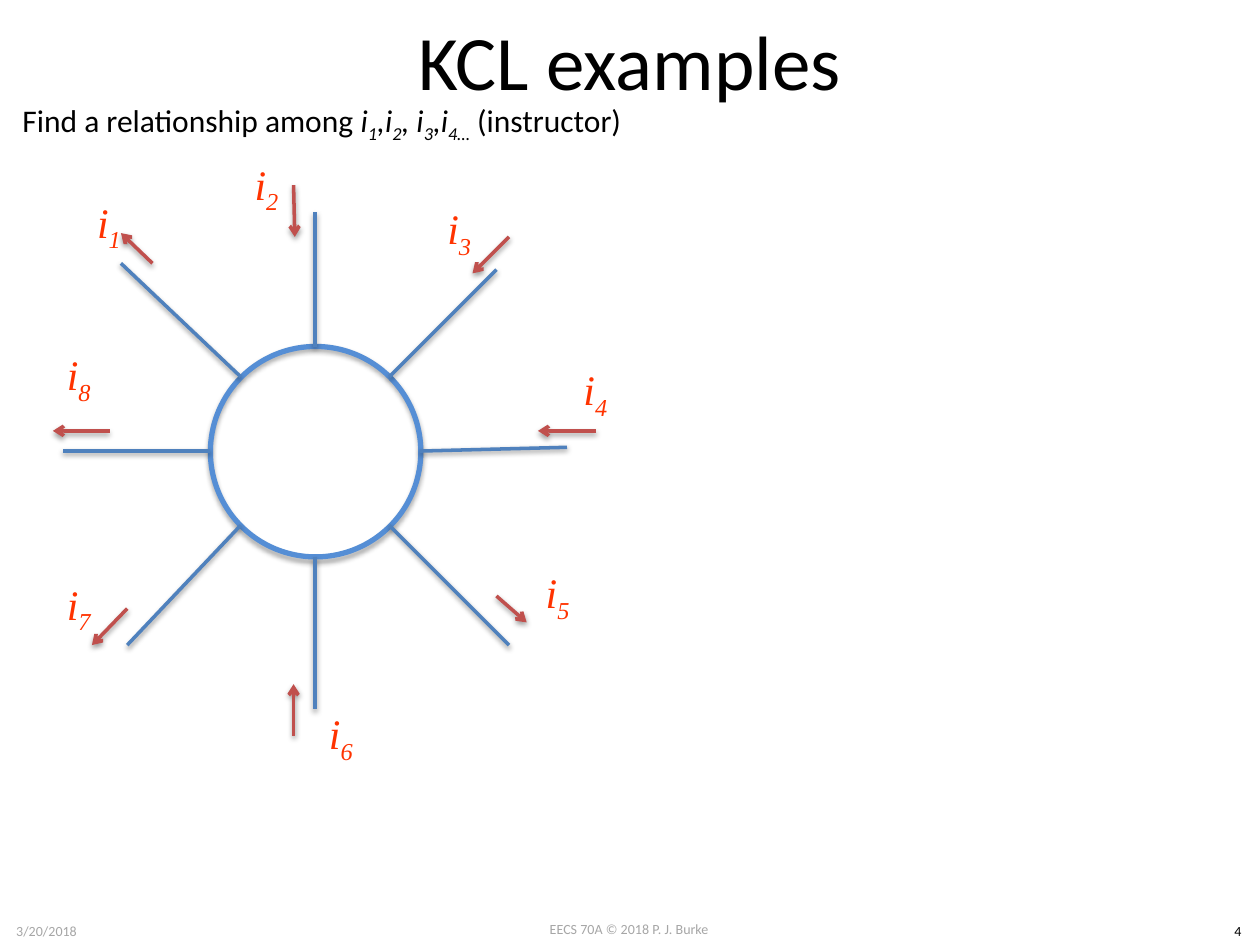
from pptx import Presentation
from pptx.dml.color import RGBColor
from pptx.enum.shapes import MSO_CONNECTOR, MSO_SHAPE
from pptx.enum.text import MSO_ANCHOR, MSO_AUTO_SIZE, PP_ALIGN
from pptx.oxml import parse_xml
from pptx.oxml.ns import nsdecls
from pptx.util import Inches, Pt

STRAIGHT = MSO_CONNECTOR.STRAIGHT
ELLIPSE = MSO_SHAPE.OVAL
MIDDLE, TOP = MSO_ANCHOR.MIDDLE, MSO_ANCHOR.TOP
CENTER, LEFT = PP_ALIGN.CENTER, PP_ALIGN.LEFT
FIT_SHAPE, NO_FIT = MSO_AUTO_SIZE.SHAPE_TO_FIT_TEXT, MSO_AUTO_SIZE.NONE

BLACK = RGBColor(0x00, 0x00, 0x00)
GRAY = RGBColor(0xA6, 0xA6, 0xA6)
BRANCH_BLUE = RGBColor(0x4F, 0x81, 0xBD)
NODE_BLUE = RGBColor(0x55, 0x8E, 0xD5)
ARROW_RED = RGBColor(0xC0, 0x50, 0x4D)
LABEL_RED = RGBColor(0xFF, 0x33, 0x00)

TITLE_FONT = {"name": "Calibri", "size": Pt(44), "color": BLACK}
TASK_FONT = {"name": "Calibri", "size": Pt(18), "color": BLACK}
FOOTER_FONT = {"name": "Calibri", "size": Pt(8), "color": GRAY}
NUMBER_FONT = FOOTER_FONT | {"color": BLACK}
LABEL_FONT = {"name": "Times New Roman", "size": Pt(24), "italic": True, "color": LABEL_RED}

NODE = (1.67, 2.75, 1.67, 1.67)
LABEL_SIZE = (0.77, 0.61)
TASK = [
    ("Find a relationship among ", False, False),
    ("i", True, False), ("1", True, True),
    (",i", True, False), ("2", True, True),
    (", i", True, False), ("3", True, True),
    (",i", True, False), ("4…", True, True),
    (" (instructor)", False, False),
]
FOOTERS = [
    ("EECS 70A © 2018 P. J. Burke", (3.83, 7.26, 2.33, 0.24), FOOTER_FONT),
    ("3/20/2018", (0, 7.27, 0.74, 0.24), FOOTER_FONT),
    ("4", (9.65, 7.27, 0.35, 0.24), NUMBER_FONT),
]
# Each current: label corner, branch ends, arrow ends.
CURRENTS = [
    ((0.48, 1.48), (1.91, 2.99, 0.96, 2.09), (1.21, 2.09, 0.96, 1.85)),
    ((1.73, 1.18), (2.5, 2.75, 2.5, 1.68), (2.33, 1.47, 2.34, 1.88)),
    ((3.26, 1.53), (3.09, 2.99, 3.94, 2.14), (4.04, 1.88, 3.75, 2.17)),
    ((4.34, 2.81), (3.33, 3.58, 4.5, 3.55), (4.73, 3.42, 4.27, 3.42)),
    ((4.04, 4.42), (3.09, 4.17, 4.04, 5.12), (3.94, 4.73, 4.18, 4.94)),
    ((2.32, 5.54), (2.5, 4.42, 2.5, 5.63), (2.33, 5.84, 2.33, 5.43)),
    ((0.24, 4.51), (1.91, 4.17, 1.01, 5.12), (1.01, 4.83, 0.73, 5.12)),
    ((0.24, 2.69), (1.67, 3.58, 0.5, 3.58), (0.87, 3.42, 0.42, 3.42)),
]


def inches(values):
    """Turn plain numbers into lengths."""
    return [Inches(value) for value in values]


def add_span(para, text, font, subscript=False):
    """Append a formatted run, lowered if it is a subscript."""
    span = para.add_run()
    span.text = text
    for name, value in font.items():
        if name == "color":
            span.font.color.rgb = value
        else:
            setattr(span.font, name, value)
    if subscript:
        span._r.get_or_add_rPr().set("baseline", "-25000")


def add_text(page, area, align=CENTER, anchor=TOP, wrap=True, fit=FIT_SHAPE):
    """Add an empty text box and return its paragraph."""
    frame = page.shapes.add_textbox(*inches(area)).text_frame
    layout = {"word_wrap": wrap, "auto_size": fit, "vertical_anchor": anchor}
    for name, value in layout.items():
        setattr(frame, name, value)
    para = frame.paragraphs[0]
    para.alignment = align
    return para


def add_shadow(shape, opacity, distance):
    """Give a shape a soft shadow that falls straight down."""
    shape._element.spPr.append(parse_xml(
        f'<a:effectLst {nsdecls("a")}><a:outerShdw blurRad="{Pt(3.1)}" '
        f'dist="{Pt(distance)}" dir="5400000" rotWithShape="0"><a:srgbClr val="{BLACK}">'
        f'<a:alpha val="{opacity * 1000}"/></a:srgbClr></a:outerShdw></a:effectLst>'))


def add_line(page, ends, color, arrow=False):
    """Draw a shadowed line, with an arrowhead at its end on request."""
    line = page.shapes.add_connector(STRAIGHT, *inches(ends))
    line.line.color.rgb = color
    line.line.width = Pt(2)
    if arrow:
        line.line._get_or_add_ln().append(
            parse_xml(f'<a:tailEnd {nsdecls("a")} type="arrow"/>'))
    add_shadow(line, 38, 1.6)


def add_node(page):
    """Draw the circle where all branches meet."""
    node = page.shapes.add_shape(ELLIPSE, *inches(NODE))
    node.fill.background()
    node.line.color.rgb = NODE_BLUE
    node.line.width = Pt(3)
    add_shadow(node, 35, 1.8)


def add_title(page, text):
    """Place and fill the title."""
    title = page.shapes.title
    for name, value in zip(("left", "top", "width", "height"), inches((0.5, 0, 9, 0.95))):
        setattr(title, name, value)
    title.text_frame.vertical_anchor = MIDDLE
    para = title.text_frame.paragraphs[0]
    para.alignment = CENTER
    add_span(para, text, TITLE_FONT)


def main():
    """Build the slide on Kirchhoff's current law."""
    deck = Presentation()
    deck.slide_width, deck.slide_height = inches((10, 7.5))
    page = deck.slides.add_slide(deck.slide_layouts[5])
    for text, area, font in FOOTERS:
        add_span(add_text(page, area), text, font)
    add_title(page, "KCL examples")
    task = add_text(page, (0.08, 0.75, 5.12, 0.4), align=LEFT, wrap=False)
    for text, italic, subscript in TASK:
        add_span(task, text, TASK_FONT | {"italic": italic}, subscript)
    add_node(page)
    for number, (corner, branch, arrow) in enumerate(CURRENTS, start=1):
        add_line(page, branch, BRANCH_BLUE)
        add_line(page, arrow, ARROW_RED, arrow=True)
        label = add_text(page, corner + LABEL_SIZE, anchor=MIDDLE, fit=NO_FIT)
        add_span(label, "i", LABEL_FONT)
        add_span(label, str(number), LABEL_FONT, subscript=True)
    deck.save("out.pptx")


if __name__ == "__main__":
    main()
